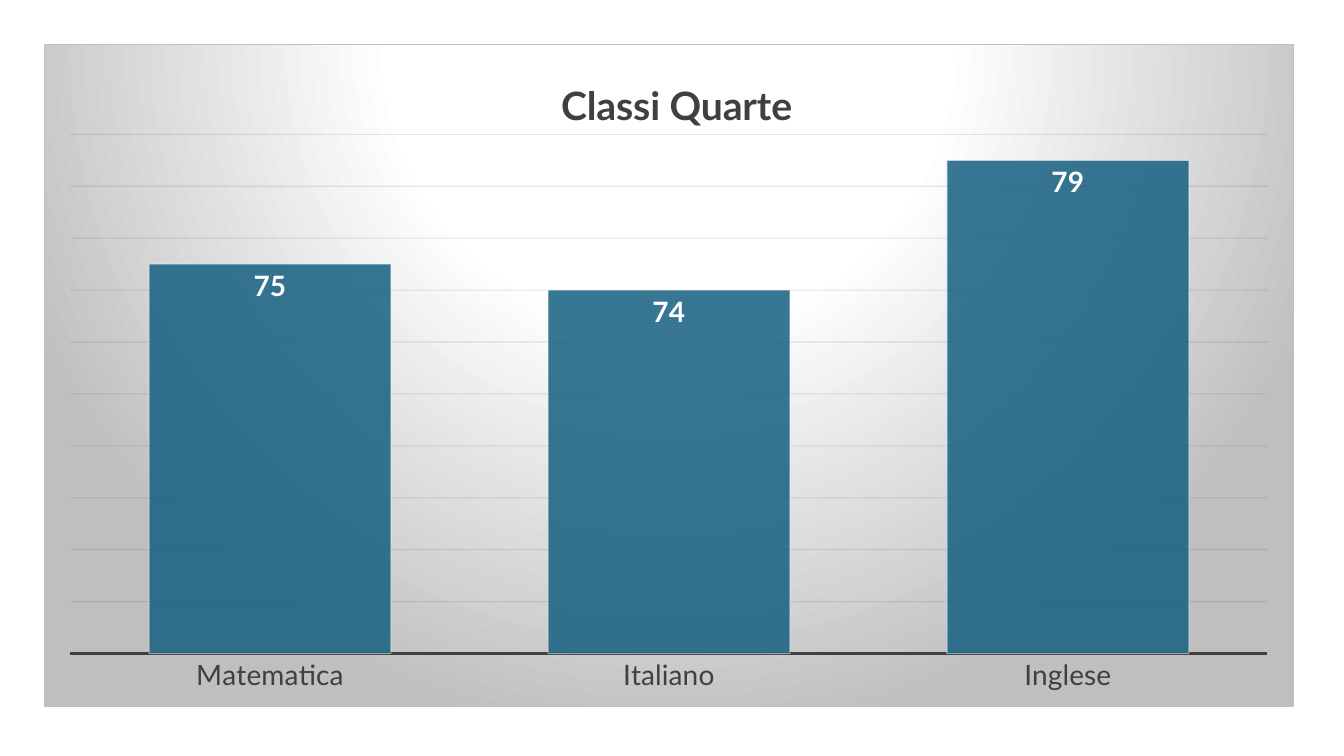
from lxml import etree
from pptx import Presentation
from pptx import util as u
from pptx.chart.data import CategoryChartData
from pptx.dml.color import RGBColor
from pptx.enum import chart as ch
from pptx.oxml import parse_xml
from pptx.oxml.ns import nsdecls, qn

PX = 914400 / 100.8
FONT = "Lato"
BLUE = RGBColor(0x15, 0x60, 0x82)
DARK = RGBColor(0x40, 0x40, 0x40)
GRID = RGBColor(0x0D, 0x0D, 0x0D)
WHITE = RGBColor(0xFF, 0xFF, 0xFF)
LEFT, TOP, WIDTH, HEIGHT = 44, 44, 1250, 663


def set_alpha(fill_parent, percent):
    for color in fill_parent.iter(qn("a:srgbClr")):
        etree.SubElement(color, qn("a:alpha")).set("val", str(percent * 1000))


def make_layout(x, y, size=None, inner=False):
    """Manual layout from slide px; size is (width, height)."""
    layout = parse_xml(f"<c:layout {nsdecls('c')}><c:manualLayout/></c:layout>")
    entries = [("layoutTarget", "inner")] if inner else []
    entries += [("xMode", "edge"), ("yMode", "edge"),
                ("x", (x - LEFT) / WIDTH), ("y", (y - TOP) / HEIGHT)]
    if size:
        entries += [("w", size[0] / WIDTH), ("h", size[1] / HEIGHT)]
    for tag, value in entries:
        etree.SubElement(layout[0], qn("c:" + tag)).set("val", str(value))
    return layout


prs = Presentation()
prs.slide_width, prs.slide_height = round(1344 * PX), round(756 * PX)
slide = prs.slides.add_slide(prs.slide_layouts[6])

# Scores by subject
scores = CategoryChartData(number_format="0")
scores.categories = ["Matematica", "Italiano", "Inglese"]
scores.add_series("Series 1", [75, 74, 79])
chart = slide.shapes.add_chart(
    ch.XL_CHART_TYPE.COLUMN_CLUSTERED,
    *[round(n * PX) for n in (LEFT, TOP, WIDTH, HEIGHT)], scores).chart
chart.has_legend = False
chart.font.name, chart.font.size = FONT, u.Pt(10)

# Title
chart.has_title = True
heading = chart.chart_title.text_frame.paragraphs[0].add_run()
heading.text = "Classi Quarte"
heading.font.name, heading.font.size, heading.font.bold = FONT, u.Pt(28), True
heading.font.color.rgb = DARK

# Axes
subjects = chart.category_axis
subjects.major_tick_mark = ch.XL_TICK_MARK.NONE
subjects.tick_labels.font.name = FONT
subjects.tick_labels.font.size = u.Pt(20)
subjects.tick_labels.font.color.rgb = DARK
subjects.format.line.color.rgb = DARK
subjects.format.line.width = u.Pt(1.5)

points = chart.value_axis
points.minimum_scale, points.maximum_scale, points.major_unit = 60, 80, 2
points.visible = False
points.has_major_gridlines = True
grid_line = points.major_gridlines.format.line
grid_line.color.rgb = GRID
grid_line.width = u.Pt(0.75)
set_alpha(points.major_gridlines._xAx.find(qn("c:majorGridlines")), 10)

# Columns and their values
plot = chart.plots[0]
plot.gap_width = 65
plot.vary_by_categories = False
columns = plot.series[0]
columns.format.fill.solid()
columns.format.fill.fore_color.rgb = BLUE
set_alpha(columns._element.find(qn("c:spPr")), 85)
columns.format.line.color.rgb = WHITE
columns.format.line.width = u.Pt(0.75)
set_alpha(columns._element.find(qn("c:spPr")).find(qn("a:ln")), 50)

labels = columns.data_labels
labels.show_value = True
labels.position = ch.XL_LABEL_POSITION.INSIDE_END
labels.number_format, labels.number_format_is_linked = "0", False
labels.font.name, labels.font.size, labels.font.bold = FONT, u.Pt(20), True
labels.font.color.rgb = WHITE

# Placement of title and plot
title_xml = chart.chart_title._element
plot_xml = chart._chartSpace.chart.plotArea
for part in (title_xml, plot_xml):
    for old in part.findall(qn("c:layout")):
        part.remove(old)
title_xml.find(qn("c:tx")).addnext(make_layout(554, 69))
plot_xml.insert(0, make_layout(70, 134, (1198, 520), inner=True))

# Radial background and border
stops = "".join(f'<a:gs pos="{pos * 1000}"><a:srgbClr val="{color}"/></a:gs>'
                for pos, color in [(0, "FFFFFF"), (39, "FFFFFF"), (100, "BFBFBF")])
chart._chartSpace.chart.addnext(parse_xml(
    f'<c:spPr {nsdecls("c", "a")}><a:gradFill><a:gsLst>{stops}</a:gsLst>'
    '<a:path path="circle"><a:fillToRect l="50000" t="-80000" r="50000" b="180000"/>'
    '</a:path></a:gradFill><a:ln w="9525"><a:solidFill><a:srgbClr val="BFBFBF"/>'
    '</a:solidFill></a:ln></c:spPr>'))

prs.save("out.pptx")
